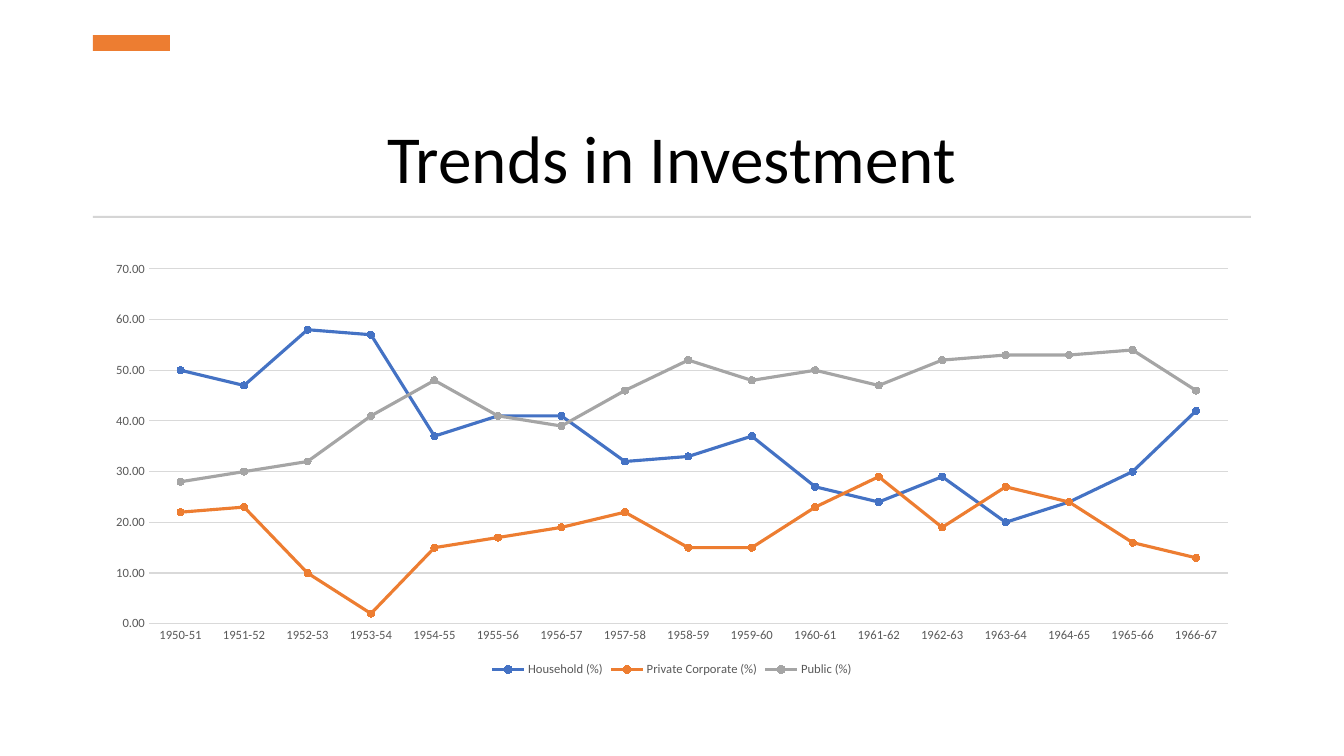
import pptx
import pptx.util
import pptx.chart.data
import pptx.dml.color
import pptx.enum.chart
import pptx.enum.shapes
import pptx.enum.text

RGBColor = pptx.dml.color.RGBColor
BLACK = RGBColor(0x00, 0x00, 0x00)
BLUE = RGBColor(0x44, 0x72, 0xC4)
ORANGE = RGBColor(0xED, 0x7D, 0x31)
GRAY = RGBColor(0xA5, 0xA5, 0xA5)
RULE_GRAY = RGBColor(0xD5, 0xD5, 0xD5)
GRID_GRAY = RGBColor(0xD9, 0xD9, 0xD9)
LABEL_GRAY = RGBColor(0x59, 0x59, 0x59)

FONT = "Calibri"
TITLE = "Trends in Investment"
FIRST_YEAR, LAST_YEAR = 1950, 1966
SERIES = [
    ("Household (%)", BLUE,
     [50, 47, 58, 57, 37, 41, 41, 32, 33, 37, 27, 24, 29, 20, 24, 30, 42]),
    ("Private Corporate (%)", ORANGE,
     [22, 23, 10, 2, 15, 17, 19, 22, 15, 15, 23, 29, 19, 27, 24, 16, 13]),
    ("Public (%)", GRAY,
     [28, 30, 32, 41, 48, 41, 39, 46, 52, 48, 50, 47, 52, 53, 53, 54, 46]),
]

EMU_PER_PX = 914400 / 100.8
SLIDE_SIZE = (1344, 756)
LEFT, WIDTH = 93, 1158
TITLE_BOX = (LEFT, 75, WIDTH, 128)
BARS = [
    ((LEFT, 35, 77, 16), ORANGE),
    ((LEFT, 216, WIDTH, 2), RULE_GRAY),
]
CHART_BOX = (LEFT, 253, WIDTH, 428)


def emu(lengths):
    return [pptx.util.Emu(round(length * EMU_PER_PX)) for length in lengths]


def style_font(font, size, color):
    font.name = FONT
    font.size = pptx.util.Pt(size)
    font.color.rgb = color


def style_line(line, width, color):
    line.width = pptx.util.Pt(width)
    line.color.rgb = color


def fill_solid(fill, color):
    fill.solid()
    fill.fore_color.rgb = color


def add_title(slide):
    title = slide.shapes.title
    title.left, title.top, title.width, title.height = emu(TITLE_BOX)
    text_frame = title.text_frame
    text_frame.text = TITLE
    text_frame.auto_size = pptx.enum.text.MSO_AUTO_SIZE.NONE
    text_frame.vertical_anchor = pptx.enum.text.MSO_ANCHOR.BOTTOM
    paragraph = text_frame.paragraphs[0]
    paragraph.alignment = pptx.enum.text.PP_ALIGN.CENTER
    paragraph.line_spacing = 0.9
    style_font(paragraph.runs[0].font, 48, BLACK)


def add_bar(slide, box, color):
    bar = slide.shapes.add_shape(pptx.enum.shapes.MSO_SHAPE.RECTANGLE, *emu(box))
    bar.shadow.inherit = False
    fill_solid(bar.fill, color)
    bar.line.fill.background()


def style_axes(chart):
    for axis in (chart.category_axis, chart.value_axis):
        axis.major_tick_mark = pptx.enum.chart.XL_TICK_MARK.NONE
        axis.minor_tick_mark = pptx.enum.chart.XL_TICK_MARK.NONE
        style_font(axis.tick_labels.font, 9, LABEL_GRAY)
    style_line(chart.category_axis.format.line, 0.75, GRID_GRAY)
    value_axis = chart.value_axis
    value_axis.minimum_scale = 0
    value_axis.maximum_scale = 70
    value_axis.major_unit = 10
    value_axis.format.line.fill.background()
    value_axis.has_major_gridlines = True
    style_line(value_axis.major_gridlines.format.line, 0.75, GRID_GRAY)
    value_axis.tick_labels.number_format = "0.00"
    value_axis.tick_labels.number_format_is_linked = False


def style_series(series, color):
    series.smooth = False
    style_line(series.format.line, 2.25, color)
    series.marker.style = pptx.enum.chart.XL_MARKER_STYLE.CIRCLE
    series.marker.size = 5
    fill_solid(series.marker.format.fill, color)
    style_line(series.marker.format.line, 0.75, color)


def add_investment_chart(slide):
    chart_data = pptx.chart.data.CategoryChartData(number_format="0.00")
    chart_data.categories = [
        f"{year}-{(year + 1) % 100}" for year in range(FIRST_YEAR, LAST_YEAR + 1)
    ]
    for name, color, values in SERIES:
        chart_data.add_series(name, values)
    chart = slide.shapes.add_chart(
        pptx.enum.chart.XL_CHART_TYPE.LINE_MARKERS, *emu(CHART_BOX), chart_data
    ).chart
    chart.has_title = False
    style_font(chart.font, 10, BLACK)
    chart.has_legend = True
    chart.legend.position = pptx.enum.chart.XL_LEGEND_POSITION.BOTTOM
    chart.legend.include_in_layout = False
    style_font(chart.legend.font, 9, LABEL_GRAY)
    style_axes(chart)
    plot = chart.plots[0]
    plot.vary_by_categories = False
    for series, (name, color, values) in zip(plot.series, SERIES):
        style_series(series, color)


def main():
    presentation = pptx.Presentation()
    presentation.slide_width, presentation.slide_height = emu(SLIDE_SIZE)
    slide = presentation.slides.add_slide(presentation.slide_layouts[5])
    add_title(slide)
    for box, color in BARS:
        add_bar(slide, box, color)
    add_investment_chart(slide)
    presentation.save("out.pptx")


if __name__ == "__main__":
    main()
